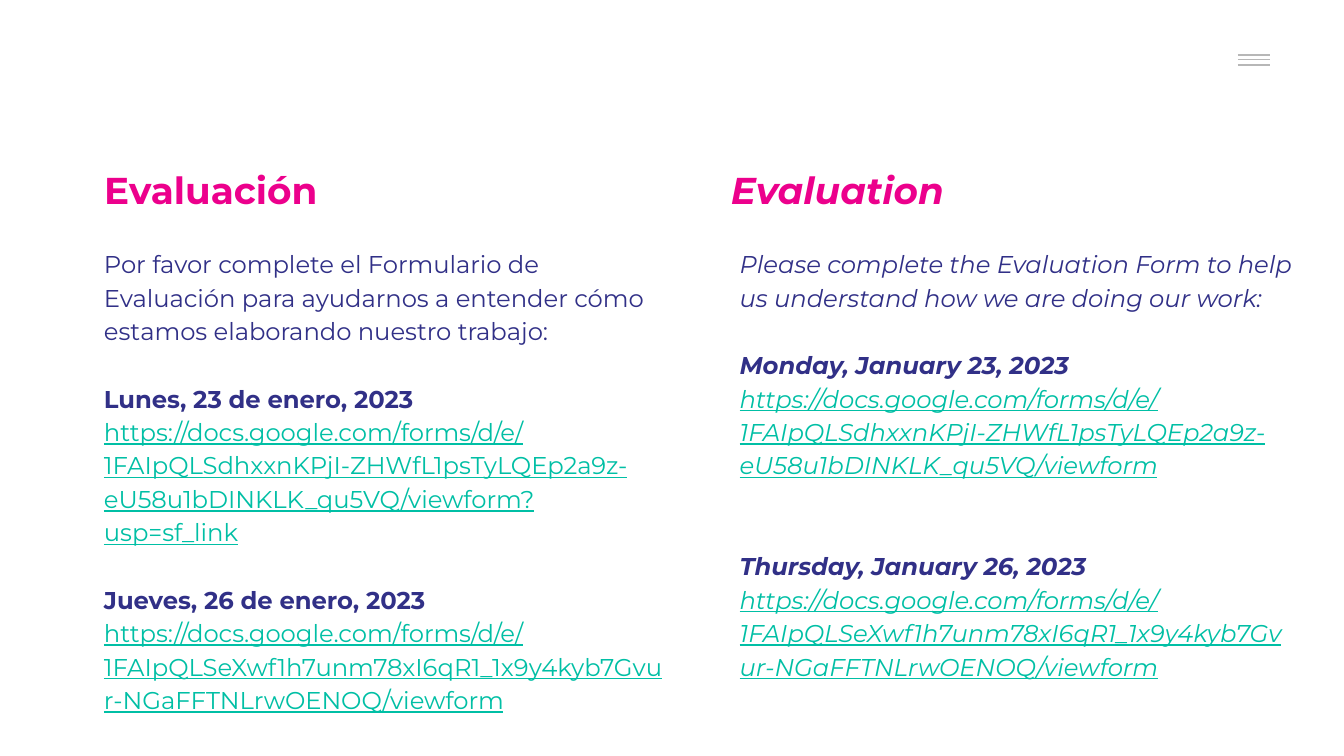
from pptx import Presentation
from pptx.dml.color import RGBColor
from pptx.enum.shapes import MSO_CONNECTOR
from pptx.enum.text import MSO_ANCHOR, MSO_AUTO_SIZE, PP_ALIGN
from pptx.oxml.ns import qn
from pptx.util import Emu, Pt
from lxml.etree import SubElement

PINK = RGBColor(0xEC, 0x00, 0x8C)
NAVY = RGBColor(0x31, 0x30, 0x87)
TEAL = RGBColor(0x00, 0xBF, 0xA5)
GREY = RGBColor(0xB7, 0xB7, 0xB7)
WHITE = RGBColor(0xFF, 0xFF, 0xFF)

FORMS = "https://docs.google.com/forms/d/e/"
MONDAY_FORM = FORMS + "1FAIpQLSdhxxnKPjI-ZHWfL1psTyLQEp2a9z-eU58u1bDINKLK_qu5VQ/viewform"
THURSDAY_FORM = FORMS + "1FAIpQLSeXwf1h7unm78xI6qR1_1x9y4kyb7Gvur-NGaFFTNLrwOENOQ/viewform"


def px(length):
    """Turn px into EMU, at 200 px to the inch."""
    return Emu(length * 4572)


class SlideBuilder:
    font = "Montserrat"
    heading_size = Pt(20)
    body_size = Pt(13)
    line_spacing = 1.15
    line_pitch = 18

    def __init__(self, page):
        self.page = page

    def frame(self, box, left, top, width, height):
        box.left, box.top = px(left), px(top)
        box.width, box.height = px(width), px(height)
        frame = box.text_frame
        frame.word_wrap = True
        frame.auto_size = MSO_AUTO_SIZE.NONE
        frame.vertical_anchor = MSO_ANCHOR.TOP
        frame.margin_left = frame.margin_right = px(20)
        frame.margin_top = frame.margin_bottom = px(20)
        return frame

    def span(self, para, text, size, color, bold=False, italic=False, underline=False):
        span = para.add_run()
        span.text = text
        font = span.font
        font.name, font.size, font.color.rgb = self.font, size, color
        font.bold, font.italic, font.underline = bold, italic, underline

    def heading(self, box, text, left, italic):
        box.fill.solid()
        box.fill.fore_color.rgb = WHITE
        para = self.frame(box, left, 228, 844, 118).paragraphs[0]
        para.alignment = PP_ALIGN.LEFT
        self.span(para, text, self.heading_size, PINK, bold=True, italic=italic)

    def body(self, intro, days, left, width, height, italic):
        box = self.page.shapes.add_textbox(0, 0, 0, 0)
        frame = self.frame(box, left, 345, width, height)
        lines = [(intro, 0, {"color": NAVY})]
        for date, link, gap_lines in days:
            lines.append((date, gap_lines, {"color": NAVY, "bold": True}))
            lines.append((link, 0, {"color": TEAL, "underline": True}))
        for index, (text, gap_lines, style) in enumerate(lines):
            para = frame.add_paragraph() if index else frame.paragraphs[0]
            para.line_spacing = self.line_spacing
            para.space_before = Pt(gap_lines * self.line_pitch)
            self.span(para, text, self.body_size, italic=italic, **style)

    def rule(self, left, right, top):
        line = self.page.shapes.add_connector(
            MSO_CONNECTOR.STRAIGHT, px(left), px(top), px(right), px(top))
        line.line.color.rgb = GREY
        line.line.width = Pt(0.75)
        SubElement(line._element.spPr, qn("a:effectLst"))


def main():
    deck = Presentation()
    deck.slide_width, deck.slide_height = px(2000), px(1125)
    page = deck.slides.add_slide(deck.slide_layouts[5])
    builder = SlideBuilder(page)

    # Menu icon
    for top in (82, 89, 97):
        builder.rule(1842, 1890, top)

    # Headings
    builder.heading(page.shapes.title, "Evaluación", 135, italic=False)
    english_heading = page.shapes.add_textbox(0, 0, 0, 0)
    builder.heading(english_heading, "Evaluation", 1068, italic=True)

    # English column
    builder.body(
        "Please complete the Evaluation Form to help us understand "
        "how we are doing our work:",
        [("Monday, January 23, 2023", MONDAY_FORM, 1),
         ("Thursday, January 26, 2023", THURSDAY_FORM, 2)],
        1081, 866, 602, italic=True)

    # Spanish column
    builder.body(
        "Por favor complete el Formulario de Evaluación para ayudarnos "
        "a entender cómo estamos elaborando nuestro trabajo:",
        [("Lunes, 23 de enero, 2023", MONDAY_FORM + "?usp=sf_link", 1),
         ("Jueves, 26 de enero, 2023", THURSDAY_FORM, 1)],
        135, 876, 198, italic=False)

    deck.save("out.pptx")


if __name__ == "__main__":
    main()
